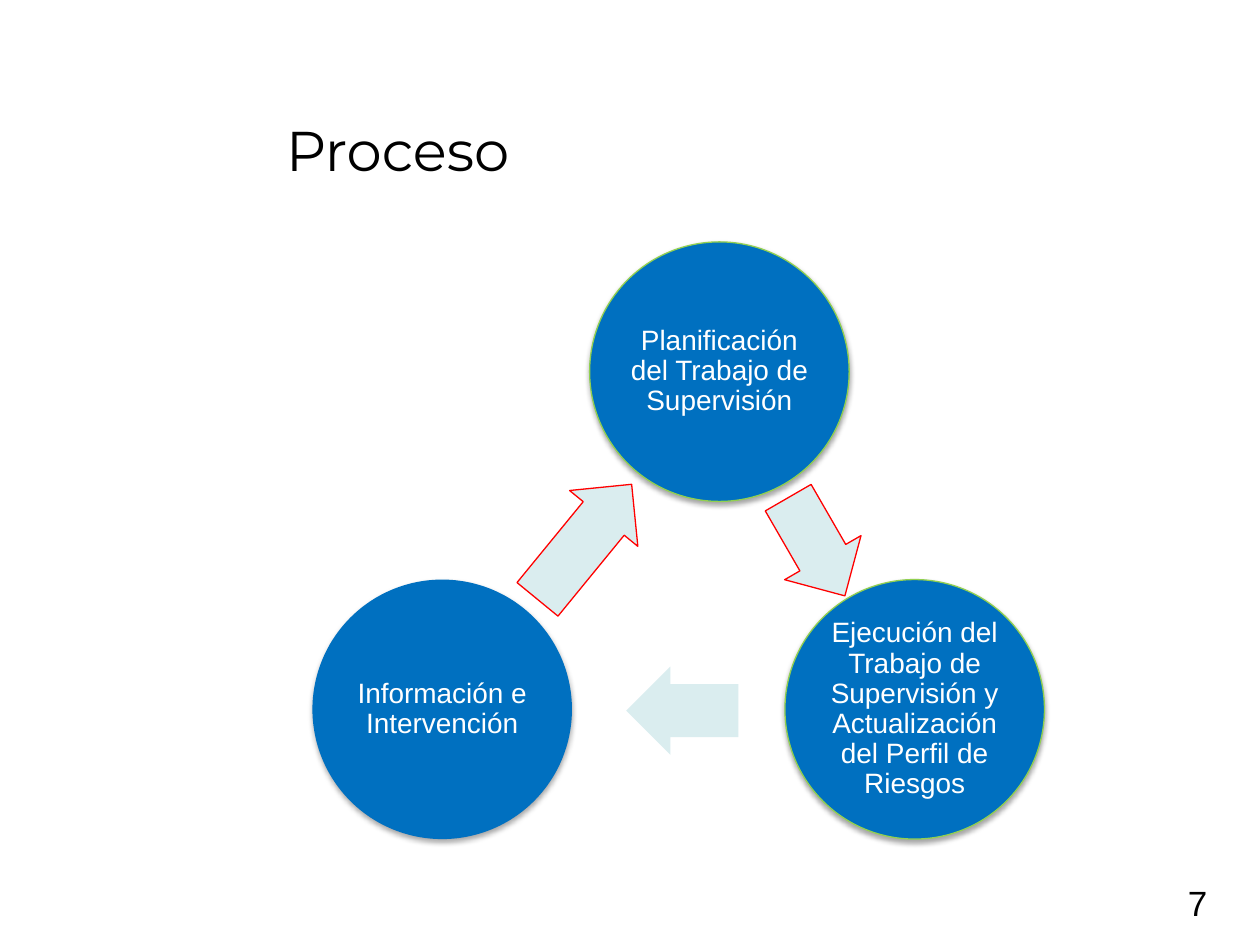
from dataclasses import dataclass

from lxml import etree
from pptx import Presentation
from pptx import util as u
from pptx.dml.color import RGBColor
from pptx.enum import shapes, text
from pptx.oxml.ns import qn

COLORS = {
    "step": "0070C0", "step_line": "92D050",
    "arrow": "DAEDEF", "arrow_line": "FF0000",
    "text": "000000", "step_text": "FFFFFF", "shadow": "000000",
}
DIAMETER = 2.06
ARROW_HEIGHT = 0.7


@dataclass
class Step:
    label: str
    left: float
    top: float
    outlined: bool = True


@dataclass
class Arrow:
    left: float
    top: float
    width: float
    rotation: float
    outlined: bool = True


STEPS = [
    Step("Planificación del Trabajo de Supervisión", 4.68, 1.92),
    Step("Ejecución del Trabajo de Supervisión y Actualización del Perfil de Riesgos",
         6.23, 4.6),
    Step("Información e Intervención", 2.48, 4.6, outlined=False),
]
ARROWS = [
    Arrow(6.03, 3.99, 0.9, 60),
    Arrow(4.97, 5.29, 0.89, 180, outlined=False),
    Arrow(4.05, 3.95, 1.18, 309.3),
]


def rgb(name: str) -> RGBColor:
    return RGBColor.from_string(COLORS[name])


def format_text(tf, font: str, size: float, color: str, align=text.PP_ALIGN.LEFT) -> None:
    for p in tf.paragraphs:
        p.alignment = align
        for r in p.runs:
            r.font.name = font
            r.font.size = u.Pt(size)
            r.font.color.rgb = rgb(color)


def paint(sp, kind: str, outlined: bool) -> None:
    """Flat fill, no shadow, and a thin outline where wanted."""
    sp.shadow.inherit = False
    sp.fill.solid()
    sp.fill.fore_color.rgb = rgb(kind)
    if outlined:
        sp.line.color.rgb = rgb(kind + "_line")
        sp.line.width = u.Pt(0.75)
    else:
        sp.line.fill.background()


def add_soft_shadow(sp) -> None:
    effects = sp._element.spPr.find(qn("a:effectLst"))
    shadow = etree.SubElement(effects, qn("a:outerShdw"), blurRad=str(u.Pt(3.1)),
                              dist=str(u.Pt(1.8)), dir="5400000", rotWithShape="0")
    color = etree.SubElement(shadow, qn("a:srgbClr"), val=COLORS["shadow"])
    etree.SubElement(color, qn("a:alpha"), val="35000")


def add_step(s, step: Step) -> None:
    sp = s.shapes.add_shape(shapes.MSO_SHAPE.OVAL, u.Inches(step.left), u.Inches(step.top),
                            u.Inches(DIAMETER), u.Inches(DIAMETER))
    paint(sp, "step", step.outlined)
    add_soft_shadow(sp)
    tf = sp.text_frame
    tf.word_wrap = True
    tf.vertical_anchor = text.MSO_ANCHOR.MIDDLE
    tf.margin_left = tf.margin_right = tf.margin_top = tf.margin_bottom = u.Inches(0.02)
    tf.text = step.label
    tf.paragraphs[0].line_spacing = 0.9
    format_text(tf, "Arial", 16, "step_text", text.PP_ALIGN.CENTER)


def add_arrow(s, arrow: Arrow) -> None:
    sp = s.shapes.add_shape(shapes.MSO_SHAPE.RIGHT_ARROW, u.Inches(arrow.left),
                            u.Inches(arrow.top), u.Inches(arrow.width),
                            u.Inches(ARROW_HEIGHT))
    sp.adjustments[0], sp.adjustments[1] = 0.6, 0.5
    sp.rotation = arrow.rotation
    paint(sp, "arrow", arrow.outlined)


def add_title(s, title: str) -> None:
    sp = s.shapes.title
    sp.left, sp.top = u.Inches(2.17), u.Inches(0.42)
    sp.width, sp.height = u.Inches(7.67), u.Inches(1.08)
    tf = sp.text_frame
    tf.text = title
    tf.vertical_anchor = text.MSO_ANCHOR.BOTTOM
    format_text(tf, "Montserrat", 32, "text")


def add_page_number(s, number: int) -> None:
    sp = s.shapes.add_textbox(u.Inches(9.33), u.Inches(6.95), u.Inches(0.67), u.Inches(0.43))
    tf = sp.text_frame
    tf.word_wrap = True
    tf.text = str(number)
    format_text(tf, "Arial", 20, "text")


def main() -> None:
    prs = Presentation()
    prs.slide_width, prs.slide_height = u.Inches(10), u.Inches(7.5)
    s = prs.slides.add_slide(prs.slide_layouts[5])
    add_page_number(s, 7)
    add_title(s, "Proceso")
    for step, arrow in zip(STEPS, ARROWS):
        add_step(s, step)
        add_arrow(s, arrow)
    prs.save("out.pptx")


if __name__ == "__main__":
    main()
